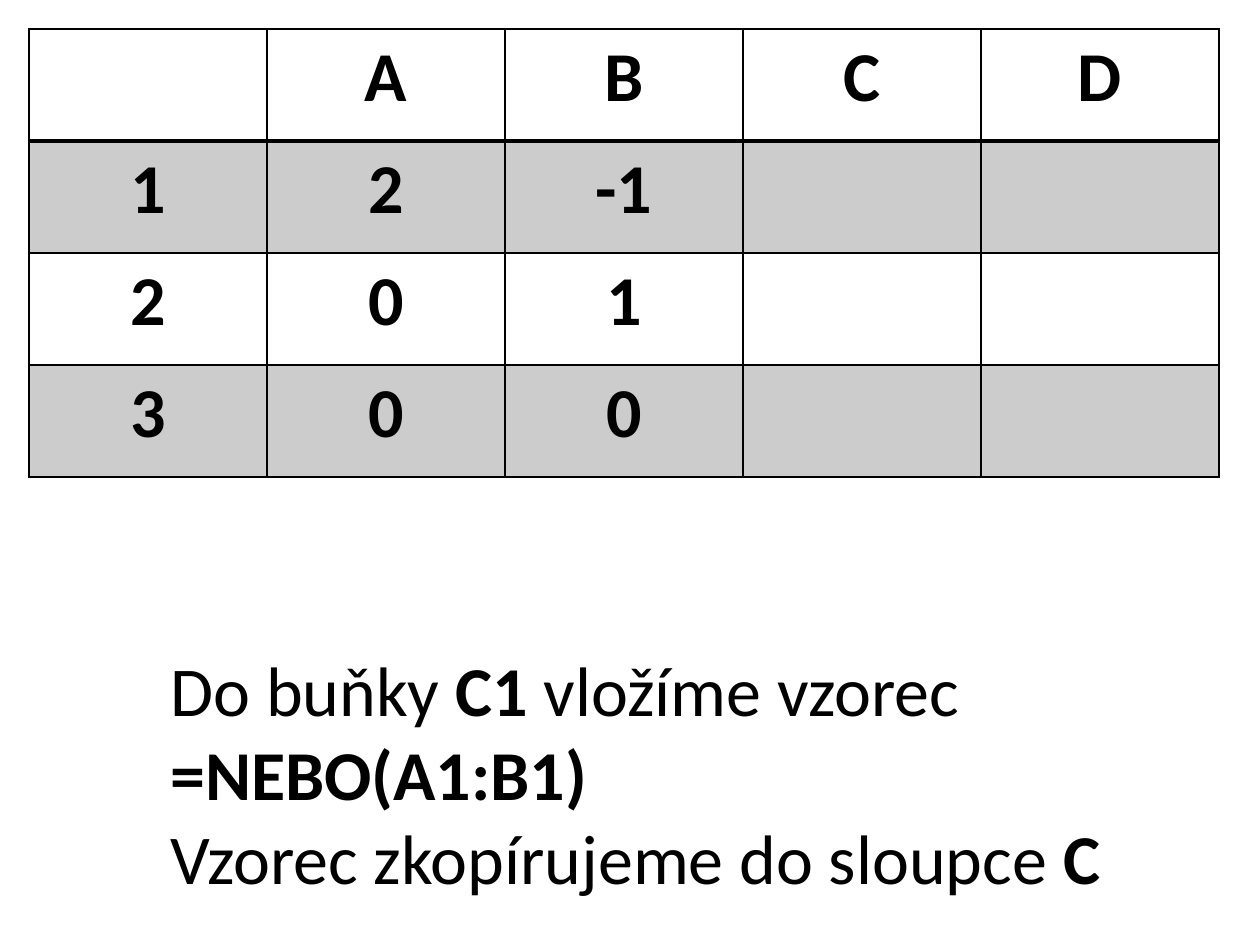
from dataclasses import dataclass

from lxml import etree
from pptx import Presentation
from pptx import util as u
from pptx.dml.color import RGBColor
from pptx.enum import text
from pptx.oxml import ns

PX = 914400 / 126
BLACK = RGBColor(0x00, 0x00, 0x00)
FONT = "Calibri"
FONT_SIZE = u.Pt(40)
SHADE_ALPHA = 20
THIN, THICK = 1, 2

TABLE_LEFT, TABLE_TOP = 29, 29
COLUMN_WIDTH, ROW_HEIGHT = 238, 112
SHEET = [
    ["", "A", "B", "C", "D"],
    ["1", "2", "-1", "", ""],
    ["2", "0", "1", "", ""],
    ["3", "0", "0", "", ""],
]


@dataclass(frozen=True)
class Span:
    words: str
    bold: bool = False


INSTRUCTIONS = [
    [
        Span("Do buňky "),
        Span("C1 ", True),
        Span("vložíme vzorec "),
        Span("=NEBO(A1:B1)", True),
    ],
    [Span("Vzorec zkopírujeme do sloupce "), Span("C", True)],
]


def px(length: int) -> u.Emu:
    return u.Emu(round(length * PX))


def add_span(para, span: Span) -> None:
    run = para.add_run()
    run.text = span.words
    run.font.name = FONT
    run.font.size = FONT_SIZE
    run.font.bold = span.bold
    run.font.color.rgb = BLACK


def add_border(cell, side: str, points: int) -> None:
    properties = cell._tc.get_or_add_tcPr()
    line = etree.SubElement(properties, ns.qn(f"a:ln{side}"), w=str(u.Pt(points)))
    fill = etree.SubElement(line, ns.qn("a:solidFill"))
    etree.SubElement(fill, ns.qn("a:srgbClr"), val=str(BLACK))


def shade(cell) -> None:
    cell.fill.solid()
    cell.fill.fore_color.rgb = BLACK
    color = cell._tc.tcPr.find(f".//{ns.qn('a:solidFill')}[last()]")
    color = cell._tc.tcPr.find(ns.qn("a:solidFill")).find(ns.qn("a:srgbClr"))
    etree.SubElement(color, ns.qn("a:alpha"), val=str(SHADE_ALPHA * 1000))


def draw_cell(cell, words: str, row: int) -> None:
    widths = {
        "L": THIN,
        "R": THIN,
        "T": THICK if row == 1 else THIN,
        "B": THICK if row == 0 else THIN,
    }
    for side, points in widths.items():
        add_border(cell, side, points)
    if row % 2:
        shade(cell)
    else:
        cell.fill.background()
    if words:
        para = cell.text_frame.paragraphs[0]
        para.alignment = text.PP_ALIGN.CENTER
        add_span(para, Span(words, True))


def draw_sheet(page) -> None:
    rows, columns = len(SHEET), len(SHEET[0])
    table = page.shapes.add_table(
        rows, columns, px(TABLE_LEFT), px(TABLE_TOP),
        px(columns * COLUMN_WIDTH), px(rows * ROW_HEIGHT),
    ).table
    table.first_row = False
    table.horz_banding = False
    for column in table.columns:
        column.width = px(COLUMN_WIDTH)
    for row, values in enumerate(SHEET):
        table.rows[row].height = px(ROW_HEIGHT)
        for column, words in enumerate(values):
            draw_cell(table.cell(row, column), words, row)


def draw_instructions(page) -> None:
    box = page.shapes.add_textbox(px(158), px(640), px(994), px(267))
    frame = box.text_frame
    frame.word_wrap = True
    frame.auto_size = text.MSO_AUTO_SIZE.SHAPE_TO_FIT_TEXT
    for index, spans in enumerate(INSTRUCTIONS):
        para = frame.add_paragraph() if index else frame.paragraphs[0]
        for span in spans:
            add_span(para, span)


def main() -> None:
    deck = Presentation()
    deck.slide_width, deck.slide_height = px(1260), px(945)
    page = deck.slides.add_slide(deck.slide_layouts[6])
    draw_sheet(page)
    draw_instructions(page)
    deck.save("out.pptx")


if __name__ == "__main__":
    main()
